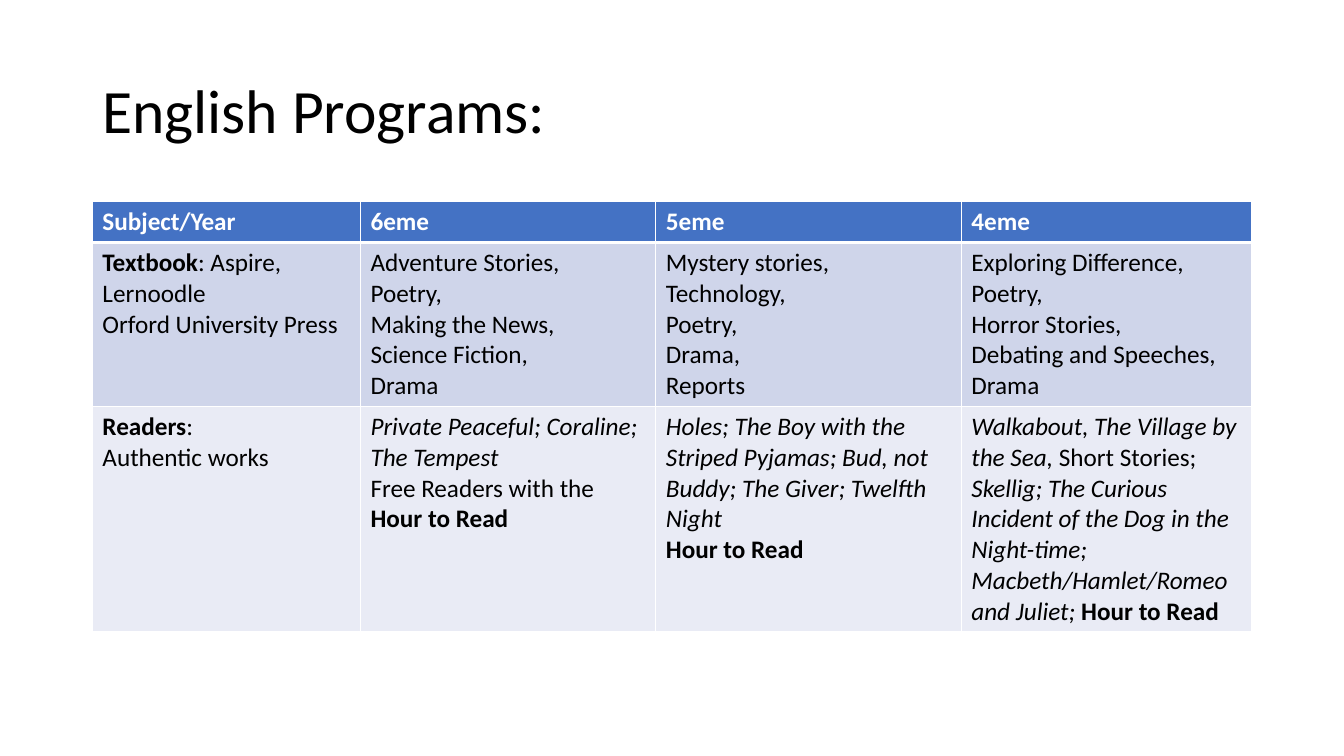
from lxml import etree
from pptx import Presentation
from pptx.dml.color import RGBColor
from pptx.enum.text import MSO_ANCHOR
from pptx.oxml.ns import qn
from pptx.util import Pt

MIDDLE = MSO_ANCHOR.MIDDLE
FONT = "Calibri"
COLORS = {
    "text": "000000",
    "white": "FFFFFF",
    "header": "4472C4",
    "textbook": "CFD5EA",
    "readers": "E9EBF5",
}
COLUMN_WIDTHS = [191.5, 211, 218.2, 207.3]
ROW_HEIGHTS = [29.2, 117.2, 160.8]
ROW_FILLS = ["header", "textbook", "readers"]

# Each cell is a list of paragraphs, each paragraph a list of (text, style) runs;
# style holds "b" for bold and "i" for italic
HEADINGS = ["Subject/Year", "6eme", "5eme", "4eme"]
TOPICS = [
    ["Adventure Stories,", "Poetry,", "Making the News,", "Science Fiction,", "Drama"],
    ["Mystery stories, Technology,", "Poetry,", "Drama,", "Reports"],
    ["Exploring Difference, Poetry,", "Horror Stories,", "Debating and Speeches, Drama"],
]
READING_SCHEME = ("Hour to Read", "b")
TEXTBOOK = [
    [("Textbook", "b"), (": Aspire, Lernoodle", "")],
    [("Orford University Press", "")],
]
READERS = [
    [[("Readers", "b"), (":", "")], [("Authentic works", "")]],
    [
        [("Private Peaceful; Coraline;", "i")],
        [("The Tempest", "i")],
        [("Free Readers with the ", ""), READING_SCHEME],
    ],
    [
        [("Holes; The Boy with the Striped Pyjamas; Bud, not Buddy; "
          "The Giver; Twelfth Night", "i")],
        [READING_SCHEME],
    ],
    [
        [("Walkabout, The Village by the Sea,", "i"), (" Short Stories; ", ""),
         ("Skellig; The Curious Incident of the Dog in the Night-time; "
          "Macbeth/Hamlet/Romeo and Juliet; ", "i"), READING_SCHEME],
    ],
]
PROGRAM_ROWS = [
    [[[(heading, "b")]] for heading in HEADINGS],
    [TEXTBOOK] + [[[(topic, "")] for topic in topics] for topics in TOPICS],
    READERS,
]


def add_run(paragraph, text, size, color, style=""):
    run = paragraph.add_run()
    run.text = text
    run.font.name = FONT
    run.font.size = Pt(size)
    run.font.bold = "b" in style
    run.font.italic = "i" in style
    run.font.color.rgb = RGBColor.from_string(COLORS[color])


def set_borders(cell, bottom_width):
    properties = cell._tc.get_or_add_tcPr()
    widths = {"a:lnL": 1, "a:lnR": 1, "a:lnT": 1, "a:lnB": bottom_width}
    for index, (tag, width) in enumerate(widths.items()):
        line = etree.Element(qn(tag), w=str(Pt(width)))
        fill = etree.SubElement(line, qn("a:solidFill"))
        etree.SubElement(fill, qn("a:srgbClr"), val=COLORS["white"])
        properties.insert(index, line)


def add_title(slide, left, top, width, height):
    box = slide.shapes.add_textbox(Pt(left), Pt(top), Pt(width), Pt(height))
    frame = box.text_frame
    frame.word_wrap = True
    frame.vertical_anchor = MIDDLE
    paragraph = frame.paragraphs[0]
    paragraph.line_spacing = 0.9
    add_run(paragraph, "English Programs:", 44, "text")


def fill_cell(cell, paragraphs, fill, is_header):
    cell.fill.solid()
    cell.fill.fore_color.rgb = RGBColor.from_string(COLORS[fill])
    set_borders(cell, 3 if is_header else 1)
    frame = cell.text_frame
    for index, runs in enumerate(paragraphs):
        paragraph = frame.add_paragraph() if index else frame.paragraphs[0]
        for text, style in runs:
            add_run(paragraph, text, 18, "white" if is_header else "text", style)


def add_program_table(slide, left, top, width, height):
    shape = slide.shapes.add_table(len(PROGRAM_ROWS), len(HEADINGS),
                                   Pt(left), Pt(top), Pt(width), Pt(height))
    table = shape.table
    for column, column_width in zip(table.columns, COLUMN_WIDTHS):
        column.width = Pt(column_width)
    for row, row_height in zip(table.rows, ROW_HEIGHTS):
        row.height = Pt(row_height)
    for row_index, cells in enumerate(PROGRAM_ROWS):
        for column_index, paragraphs in enumerate(cells):
            fill_cell(table.cell(row_index, column_index), paragraphs,
                      ROW_FILLS[row_index], row_index == 0)


def main():
    presentation = Presentation()
    presentation.slide_width = Pt(960)
    presentation.slide_height = Pt(540)
    slide = presentation.slides.add_slide(presentation.slide_layouts[6])

    # Title above the programs table
    add_title(slide, 66, 28.75, 828, 104.4)
    add_program_table(slide, 66, 144, sum(COLUMN_WIDTHS), sum(ROW_HEIGHTS))

    presentation.save("out.pptx")


if __name__ == "__main__":
    main()
